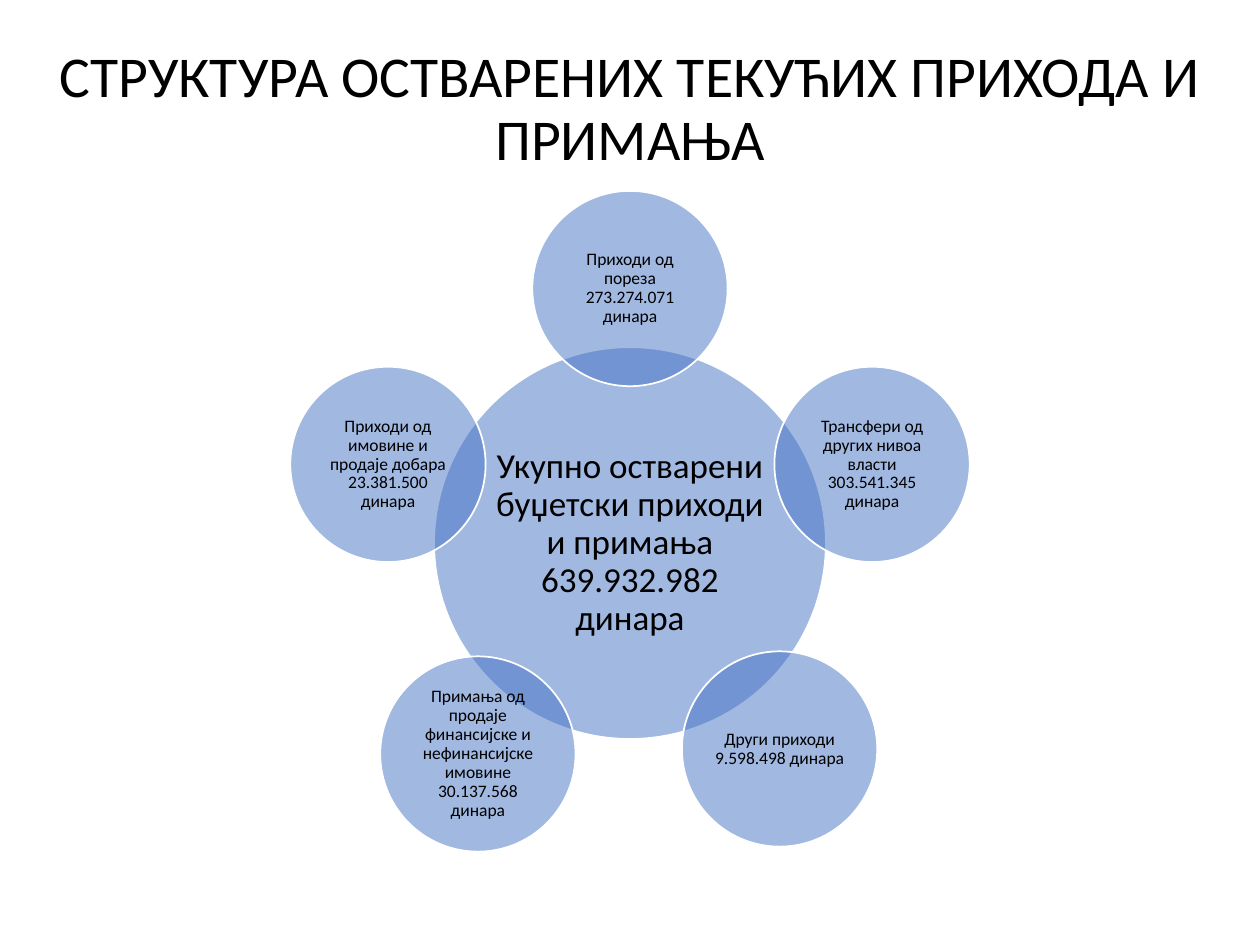
from dataclasses import dataclass
from math import cos, radians, sin

from pptx import Presentation
from pptx.dml.color import RGBColor
from pptx.enum.shapes import MSO_SHAPE as Shape
from pptx.enum.text import MSO_ANCHOR as Anchor, PP_ALIGN as Align
from pptx.oxml.ns import qn
from pptx.util import Inches, Pt
from lxml.etree import SubElement


@dataclass(frozen=True)
class Theme:
    font: str = "Calibri"
    text: RGBColor = RGBColor(0x00, 0x00, 0x00)
    circle: RGBColor = RGBColor(0x44, 0x72, 0xC4)
    outline: RGBColor = RGBColor(0xFF, 0xFF, 0xFF)
    opacity: int = 50
    title_size: int = 33
    total_size: int = 20
    source_size: int = 10


THEME = Theme()

TITLE = "СТРУКТУРА ОСТВАРЕНИХ ТЕКУЋИХ ПРИХОДА И ПРИМАЊА"
TOTAL = "Укупно остварени буџетски приходи и примања 639.932.982 динара"
# Clockwise from the top: text, and offset from the even ring position
SOURCES = [
    ("Приходи од пореза 273.274.071 динара", (0, 0)),
    ("Трансфери од других нивоа власти 303.541.345 динара", (0, 0)),
    ("Други приходи 9.598.498 динара", (0, 0)),
    ("Примања од продаје финансијске и нефинансијске имовине "
     "30.137.568 динара", (-0.02, 0.04)),
    ("Приходи од имовине и продаје добара 23.381.500 динара", (0, 0)),
]

CENTER_X, CENTER_Y = 5, 4.31
RING_RADIUS = 2.02
TOTAL_DIAMETER = 3.11
SOURCE_DIAMETER = 1.55


def write_text(frame, text, size, anchor):
    frame.word_wrap = True
    frame.vertical_anchor = anchor
    paragraph = frame.paragraphs[0]
    paragraph.alignment = Align.CENTER
    paragraph.line_spacing = 0.9
    run = paragraph.add_run()
    run.text = text
    run.font.name = THEME.font
    run.font.size = Pt(size)
    run.font.color.rgb = THEME.text


def add_title(slide):
    title = slide.shapes.add_textbox(
        Inches(0.3), Inches(0.25), Inches(9.4), Inches(1.17))
    write_text(title.text_frame, TITLE, THEME.title_size, Anchor.BOTTOM)


def set_opacity(shape, percent):
    color = shape.fill._xPr.find(qn("a:solidFill"))[0]
    SubElement(color, qn("a:alpha"), val=str(percent * 1000))


def add_circle(diagram, x, y, diameter, text, size, inset):
    """Add a translucent circle centred on (x, y), in inches."""
    circle = diagram.shapes.add_shape(
        Shape.OVAL, Inches(x - diameter / 2), Inches(y - diameter / 2),
        Inches(diameter), Inches(diameter))
    circle.shadow.inherit = False
    circle.fill.solid()
    circle.fill.fore_color.rgb = THEME.circle
    set_opacity(circle, THEME.opacity)
    circle.line.color.rgb = THEME.outline
    circle.line.width = Pt(1)
    frame = circle.text_frame
    frame.margin_left = frame.margin_right = Inches(inset)
    frame.margin_top = frame.margin_bottom = Inches(inset)
    write_text(frame, text, size, Anchor.MIDDLE)


def add_radial_diagram(slide):
    diagram = slide.shapes.add_group_shape()
    add_circle(diagram, CENTER_X, CENTER_Y, TOTAL_DIAMETER,
               TOTAL, THEME.total_size, 0.03)
    for position, (text, (dx, dy)) in enumerate(SOURCES):
        angle = radians(position * 360 / len(SOURCES))
        add_circle(diagram,
                   CENTER_X + RING_RADIUS * sin(angle) + dx,
                   CENTER_Y - RING_RADIUS * cos(angle) + dy,
                   SOURCE_DIAMETER, text, THEME.source_size, 0.01)


def main():
    deck = Presentation()
    deck.slide_width, deck.slide_height = Inches(10), Inches(7.5)
    slide = deck.slides.add_slide(deck.slide_layouts[6])
    add_title(slide)
    add_radial_diagram(slide)
    deck.save("out.pptx")


if __name__ == "__main__":
    main()
